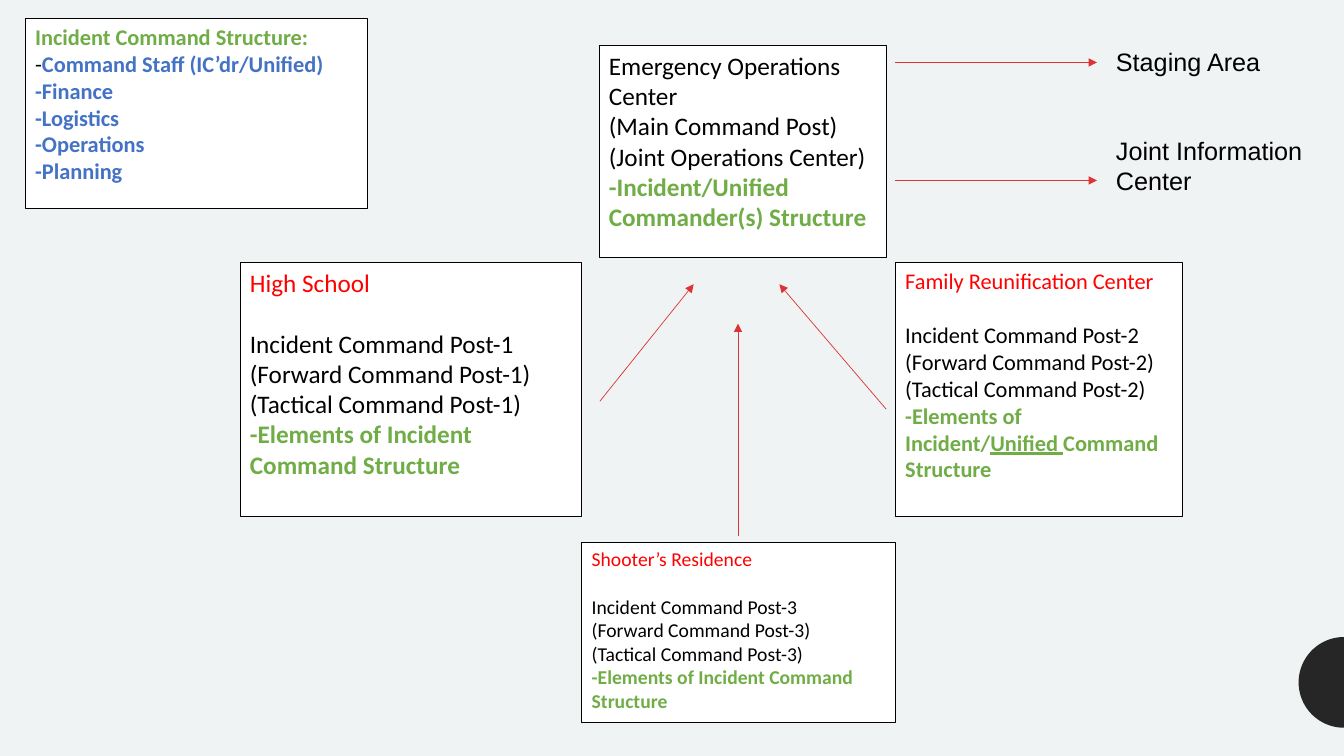
from math import cos, pi, sin

from lxml import etree
from pptx import Presentation
from pptx.dml.color import RGBColor
from pptx.enum.shapes import MSO_CONNECTOR, MSO_SHAPE
from pptx.enum.text import MSO_ANCHOR, PP_ALIGN
from pptx.oxml.ns import qn
from pptx.util import Inches, Pt

STRAIGHT = MSO_CONNECTOR.STRAIGHT
RECT = MSO_SHAPE.RECTANGLE
TOP = MSO_ANCHOR.TOP
LEFT = PP_ALIGN.LEFT

PAPER = RGBColor(0xF0, 0xF3, 0xF3)
WHITE = RGBColor(0xFF, 0xFF, 0xFF)
BLACK = RGBColor(0, 0, 0)
DARK = RGBColor(0x26, 0x26, 0x26)
RED = RGBColor(0xFF, 0, 0)
GREEN = RGBColor(0x70, 0xAD, 0x47)
BLUE = RGBColor(0x44, 0x72, 0xC4)
ARROW = RGBColor(0xDD, 0x33, 0x34)

WIDE, HIGH = 13.33, 7.5
THIN = Pt(0.5)
LEADING = 1.22

PLAIN = (BLACK, False, False)
TITLE = (RED, False, False)
STRONG = (GREEN, True, False)
UNDER = (GREEN, True, True)
STAFF = (BLUE, True, False)

ELEMENTS = [("-Elements of Incident Command Structure", STRONG)]
UNIFIED = [
    ("-Elements of Incident/", STRONG),
    ("Unified ", UNDER),
    ("Command Structure", STRONG),
]
POSTS = [
    ("High School", (2.38, 2.6, 3.39, 2.52), 18, ELEMENTS),
    ("Family Reunification Center", (8.88, 2.6, 2.85, 2.52), 16, UNIFIED),
    ("Shooter’s Residence", (5.77, 5.38, 3.11, 1.79), 14, ELEMENTS),
]
CENTER = [
    [("Emergency Operations Center", PLAIN)],
    [("(Main Command Post)", PLAIN)],
    [("(Joint Operations Center)", PLAIN)],
    [("-Incident/Unified Commander(s) Structure", STRONG)],
]
LEGEND = [
    [("Incident Command Structure:", STRONG)],
    [("-", PLAIN), ("Command Staff (IC’dr/Unified)", STAFF)],
]
UNITS = ["Finance", "Logistics", "Operations", "Planning"]
LABELS = [
    ("Staging Area", (10.97, 0.41, 1.97, 0.4)),
    ("Joint Information Center", (10.97, 1.29, 2.1, 1.01)),
]
ARROWS = [
    (5.95, 3.98, 6.88, 2.82),
    (8.79, 4.06, 7.73, 2.82),
    (7.32, 5.32, 7.32, 3.21),
    (8.88, 0.62, 10.88, 0.62),
    (8.88, 1.79, 10.88, 1.79),
]
DISC_Y, DISC_R, STEPS = 6.77, 0.45, 48


def write(shape, lines, size, font, gap=0):
    frame = shape.text_frame
    frame.word_wrap = True
    frame.vertical_anchor = TOP
    for i, line in enumerate(lines):
        para = frame.add_paragraph() if i else frame.paragraphs[0]
        para.alignment = LEFT
        if i == 0 and gap:
            para.space_after = Pt(gap)
        for text, (color, bold, under) in line:
            run = para.add_run()
            run.text = text
            run.font.name = font
            run.font.size = Pt(size)
            run.font.bold = bold
            run.font.underline = under
            run.font.color.rgb = color


def add_box(slide, spot, lines, size, gap=0):
    box = slide.shapes.add_shape(RECT, *map(Inches, spot))
    box.shadow.inherit = False
    box.fill.solid()
    box.fill.fore_color.rgb = WHITE
    box.line.color.rgb = BLACK
    box.line.width = THIN
    write(box, lines, size, "Calibri", gap)


def add_arrow(slide, ends):
    arrow = slide.shapes.add_connector(STRAIGHT, *map(Inches, ends))
    arrow.line.color.rgb = ARROW
    arrow.line.width = THIN
    etree.SubElement(arrow.line._get_or_add_ln(), qn("a:tailEnd"), type="triangle")
    etree.SubElement(arrow._element.spPr, qn("a:effectLst"))


def add_disc(slide):
    turns = [pi / 2 + pi * i / STEPS for i in range(STEPS + 1)]
    points = [
        (Inches(WIDE + DISC_R * cos(t)), Inches(DISC_Y + DISC_R * sin(t)))
        for t in turns
    ]
    form = slide.shapes.build_freeform(*points[0])
    form.add_line_segments(points[1:], close=True)
    disc = form.convert_to_shape()
    disc.shadow.inherit = False
    disc.fill.solid()
    disc.fill.fore_color.rgb = DARK
    disc.line.fill.background()


def main():
    deck = Presentation()
    deck.slide_width, deck.slide_height = Inches(WIDE), Inches(HIGH)
    slide = deck.slides.add_slide(deck.slide_layouts[6])
    slide.background.fill.solid()
    slide.background.fill.fore_color.rgb = PAPER

    add_disc(slide)
    add_box(slide, (5.94, 0.45, 2.85, 2.1), CENTER, 18)
    for i, (name, spot, size, last) in enumerate(POSTS, 1):
        lines = [
            [(name, TITLE)],
            [(f"Incident Command Post-{i}", PLAIN)],
            [(f"(Forward Command Post-{i})", PLAIN)],
            [(f"(Tactical Command Post-{i})", PLAIN)],
            last,
        ]
        add_box(slide, spot, lines, size, size * LEADING)
    units = [[(f"-{unit}", STAFF)] for unit in UNITS]
    add_box(slide, (0.25, 0.18, 3.39, 1.89), LEGEND + units, 16)
    for ends in ARROWS:
        add_arrow(slide, ends)
    for text, spot in LABELS:
        label = slide.shapes.add_textbox(*map(Inches, spot))
        write(label, [[(text, PLAIN)]], 18, "Arial")

    deck.save("out.pptx")


if __name__ == "__main__":
    main()
